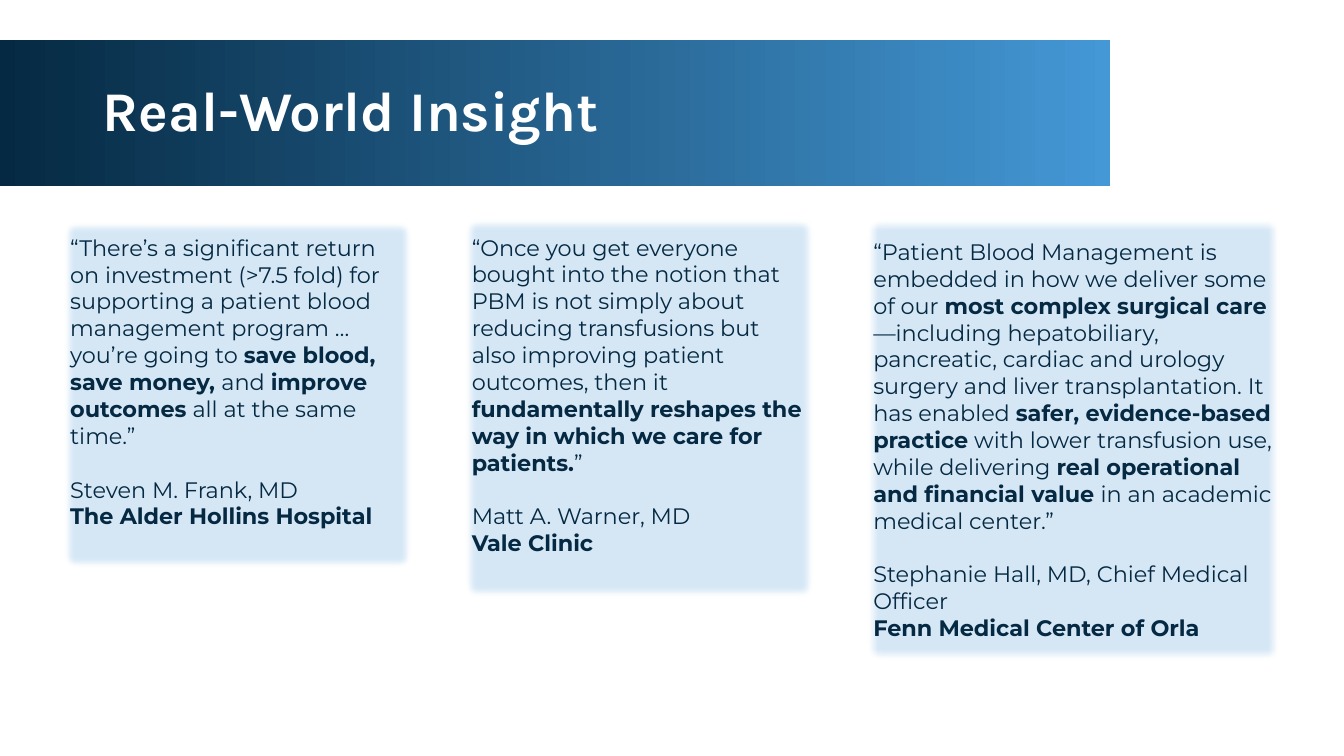
"""Build the Real-World Insight slide with three clinician quotes."""
from dataclasses import dataclass

from lxml import etree
from pptx import Presentation
from pptx.dml.color import RGBColor
from pptx.enum.shapes import MSO_SHAPE
from pptx.enum.text import MSO_ANCHOR, PP_ALIGN
from pptx.oxml.ns import qn
from pptx.util import Cm, Pt

RECTANGLE = MSO_SHAPE.RECTANGLE
MIDDLE = MSO_ANCHOR.MIDDLE
LEFT = PP_ALIGN.LEFT

TITLE = "Real-World Insight"
QUOTES = [
    {
        "top": 5.51, "width": 8.94, "height": 8.89, "bottom_inset": 0.8,
        "quote": "“There’s a significant return on investment (>7.5 fold) for supporting "
                 "a patient blood management program … you’re going to **save blood, save "
                 "money, **and **improve outcomes** all at the same time.”",
        "speaker": "Steven M. Frank, MD",
        "place": "**The Alder Hollins Hospital**",
    },
    {
        "top": 5.44, "width": 8.94, "height": 9.7, "bottom_inset": 0.8,
        "quote": "“Once you get everyone bought into the notion that PBM is not simply about "
                 "reducing transfusions but also improving patient outcomes, then it "
                 "**fundamentally reshapes the way in which we care for patients.**”",
        "speaker": "Matt A. Warner, MD",
        "place": "**Vale Clinic**",
    },
    {
        "top": 5.44, "width": 10.57, "height": 11.28, "bottom_inset": 0.13,
        "quote": "“Patient Blood Management is embedded in how we deliver some of our "
                 "**most complex surgical care**—including hepatobiliary, pancreatic, cardiac "
                 "and urology surgery and liver transplantation. It has enabled **safer, "
                 "evidence-based practice** with lower transfusion use, while delivering "
                 "**real operational and financial value **in an academic medical center.”",
        "speaker": "Stephanie Hall, MD, Chief Medical Officer",
        "place": "**Fenn Medical Center of Orla**",
    },
]
FIRST_LEFT, COLUMN_PITCH = 1.52, 10.12


@dataclass(frozen=True)
class Theme:
    """Colours, fonts and type sizes."""
    navy: RGBColor = RGBColor.from_string("052942")
    blue: RGBColor = RGBColor.from_string("4498D6")
    white: RGBColor = RGBColor.from_string("FFFFFF")
    title_font: str = "Karla"
    body_font: str = "Montserrat"
    title_size: Pt = Pt(40)
    body_size: Pt = Pt(16)
    quote_gap: Pt = Pt(19.2)
    panel_opacity: int = 22000
    soft_edge: Pt = Pt(5)


THEME = Theme()


def write(para, text, *, font, size, color, bold=False, before=None, line=None):
    """Fill a paragraph, switching bold at each double asterisk."""
    para.alignment = LEFT
    para.space_before = before
    para.line_spacing = line
    for index, part in enumerate(text.split("**")):
        if part:
            span = para.add_run()
            span.text = part
            span.font.name = font
            span.font.size = size
            span.font.bold = bold or index % 2 == 1
            span.font.color.rgb = color


def add_rectangle(page, left, top, width, height):
    """Add a rectangle without outline or shadow, measured in centimetres."""
    box = page.shapes.add_shape(RECTANGLE, Cm(left), Cm(top), Cm(width), Cm(height))
    box.shadow.inherit = False
    box.line.fill.background()
    return box


def add_title(page):
    """Draw the gradient band and set the title over it."""
    band = add_rectangle(page, 0, 1.02, 27.97, 3.68)
    band.fill.gradient()
    band.fill.gradient_angle = 0
    for stop, color in zip(band.fill.gradient_stops, (THEME.navy, THEME.blue)):
        stop.color.rgb = color
    title = page.shapes.title
    band.element.addnext(title.element)
    title.left, title.top, title.width, title.height = Cm(2.34), Cm(1.02), Cm(29.21), Cm(3.68)
    title.text_frame.vertical_anchor = MIDDLE
    write(title.text_frame.paragraphs[0], TITLE, font=THEME.title_font,
          size=THEME.title_size, color=THEME.white, bold=True, line=0.9)


def add_quote(page, left, item):
    """Draw one soft-edged panel with a quote and its source."""
    box = add_rectangle(page, left, item["top"], item["width"], item["height"])
    box.fill.solid()
    box.fill.fore_color.rgb = THEME.blue
    properties = box.element.spPr
    color = properties.find(qn("a:solidFill")).find(qn("a:srgbClr"))
    etree.SubElement(color, qn("a:alpha"), val=str(THEME.panel_opacity))
    effects = properties.find(qn("a:effectLst"))
    etree.SubElement(effects, qn("a:softEdge"), rad=str(int(THEME.soft_edge)))
    frame = box.text_frame
    frame.word_wrap = True
    frame.vertical_anchor = MIDDLE
    frame.margin_bottom = Cm(item["bottom_inset"])
    for index, key in enumerate(("quote", "speaker", "place")):
        para = frame.add_paragraph() if index else frame.paragraphs[0]
        write(para, item[key], font=THEME.body_font, size=THEME.body_size, color=THEME.navy,
              before=THEME.quote_gap if key == "speaker" else None)


def main():
    """Build and save the deck."""
    deck = Presentation()
    deck.slide_width, deck.slide_height = Cm(33.87), Cm(19.05)
    page = deck.slides.add_slide(deck.slide_layouts[5])
    add_title(page)
    for column, item in enumerate(QUOTES):
        add_quote(page, FIRST_LEFT + column * COLUMN_PITCH, item)
    deck.save("out.pptx")


if __name__ == "__main__":
    main()
